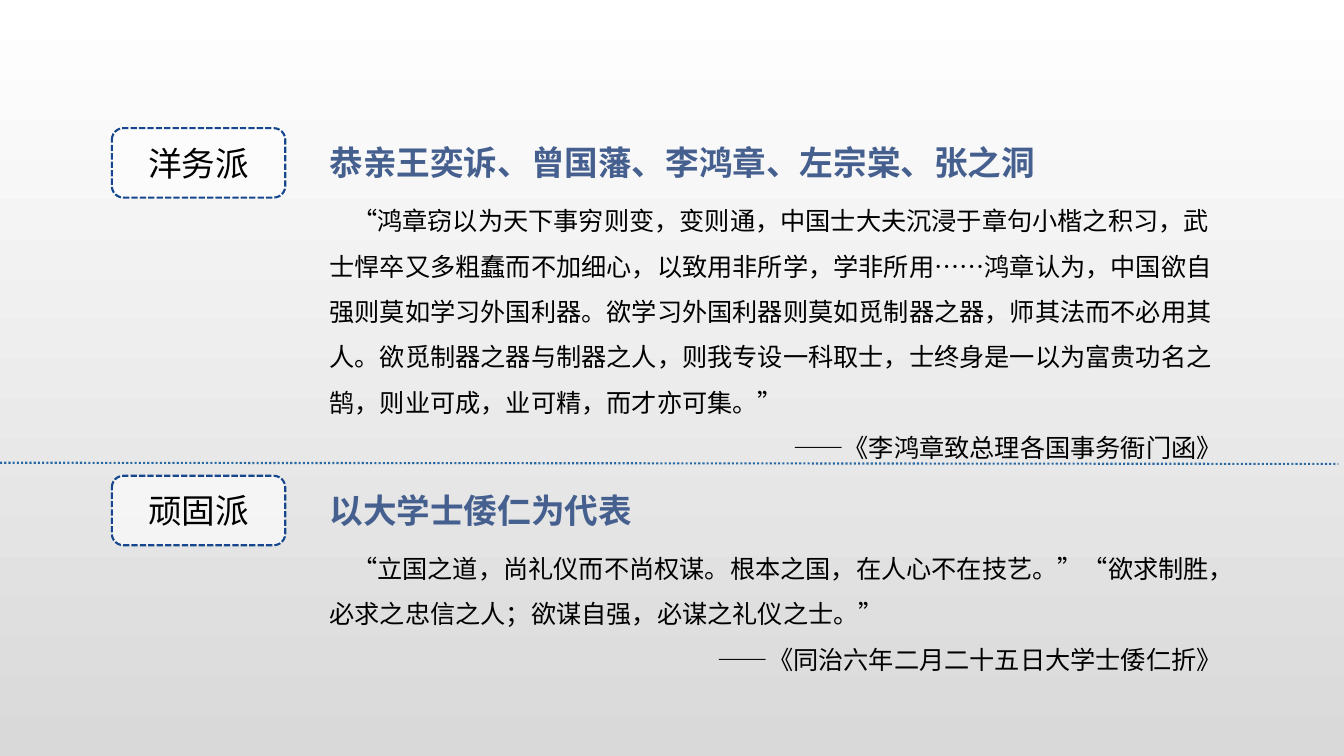
from dataclasses import dataclass
from lxml.etree import SubElement
from pptx import Presentation
from pptx.dml.color import RGBColor
from pptx.enum.dml import MSO_LINE
from pptx.enum.lang import MSO_LANGUAGE_ID
from pptx.enum.shapes import MSO_CONNECTOR, MSO_SHAPE
from pptx.enum.text import MSO_ANCHOR, MSO_AUTO_SIZE, PP_ALIGN
from pptx.oxml.ns import qn
from pptx.util import Cm, Pt


@dataclass(frozen=True)
class Theme:
    face: str = "Noto Sans CJK SC"
    ink: RGBColor = RGBColor(0x00, 0x00, 0x00)
    heading: RGBColor = RGBColor(0x45, 0x5F, 0x8E)
    outline: RGBColor = RGBColor(0x16, 0x46, 0x8D)
    divider: RGBColor = RGBColor(0x29, 0x69, 0xA3)
    white: RGBColor = RGBColor(0xFF, 0xFF, 0xFF)
    grey: RGBColor = RGBColor(0xD9, 0xD9, 0xD9)
    large: Pt = Pt(24)
    body: Pt = Pt(18)
    stroke: Pt = Pt(1.5)
    label_opacity: int = 62


THEME = Theme()

FACTIONS = [
    {
        "box": (2.82, 3.23, 28.22, 8.43),
        "label": "洋务派",
        "leaders": "恭亲王奕诉、曾国藩、李鸿章、左宗棠、张之洞",
        "quote": "“鸿章窃以为天下事穷则变，变则通，中国士大夫沉浸于章句小楷之积习，"
                 "武士悍卒又多粗蠢而不加细心，以致用非所学，学非所用……鸿章认为，"
                 "中国欲自强则莫如学习外国利器。欲学习外国利器则莫如觅制器之器，"
                 "师其法而不必用其人。欲觅制器之器与制器之人，则我专设一科取士，"
                 "士终身是一以为富贵功名之鹄，则业可成，业可精，而才亦可集。”",
        "origin": "——《李鸿章致总理各国事务衙门函》",
    },
    {
        "box": (2.82, 11.99, 28.22, 5.0),
        "label": "顽固派",
        "leaders": "以大学士倭仁为代表",
        "quote": "“立国之道，尚礼仪而不尚权谋。根本之国，在人心不在技艺。”"
                 "“欲求制胜，必求之忠信之人；欲谋自强，必谋之礼仪之士。”",
        "origin": "——《同治六年二月二十五日大学士倭仁折》",
    },
]


def apply(target, formats):
    for attribute, value in formats.items():
        setattr(target, attribute, value)


def place(part, left, top, width, height):
    apply(part, {"left": Cm(left), "top": Cm(top),
                 "width": Cm(width), "height": Cm(height)})


def write(paragraph, wording, size, color, bold=False, indent=0, **formats):
    properties = paragraph._p.get_or_add_pPr()
    properties.set("marL", "0")
    properties.set("indent", str(Cm(indent)))
    SubElement(properties, qn("a:buNone"))
    apply(paragraph, {"space_before": Pt(0), **formats})
    run = paragraph.add_run()
    run.text = wording
    apply(run.font, {"name": THEME.face, "size": size, "bold": bold,
                     "language_id": MSO_LANGUAGE_ID.SIMPLIFIED_CHINESE})
    run.font.color.rgb = color
    SubElement(run._r.get_or_add_rPr(), qn("a:ea"), typeface=THEME.face)


def add_label(slide, box, wording):
    label = slide.shapes.add_shape(MSO_SHAPE.ROUNDED_RECTANGLE,
                                   *(Cm(length) for length in box))
    label.shadow.inherit = False
    label.fill.solid()
    label.fill.fore_color.rgb = THEME.white
    white = label._element.spPr.find(qn("a:solidFill"))[0]
    SubElement(white, qn("a:alpha"), val=str(THEME.label_opacity * 1000))
    apply(label.line, {"width": THEME.stroke, "dash_style": MSO_LINE.SQUARE_DOT})
    label.line.color.rgb = THEME.outline
    label.text_frame.vertical_anchor = MSO_ANCHOR.MIDDLE
    write(label.text_frame.paragraphs[0], wording, THEME.large, THEME.ink,
          alignment=PP_ALIGN.CENTER)


def add_faction(slide, heading, passage, faction):
    left, top, width, height = faction["box"]
    text_left, text_width = left + 5.23, width - 5.23
    place(heading, text_left, top + 0.23, 19.7, 1.27)
    place(passage, text_left, top + 1.44, text_width, height - 1.44)
    for part in (heading, passage):
        apply(part.text_frame, {"word_wrap": True,
                                "auto_size": MSO_AUTO_SIZE.NONE,
                                "vertical_anchor": MSO_ANCHOR.TOP})
    write(heading.text_frame.paragraphs[0], faction["leaders"],
          THEME.large, THEME.heading, bold=True)
    write(passage.text_frame.paragraphs[0], faction["quote"],
          THEME.body, THEME.ink, indent=0.57, line_spacing=1.5)
    write(passage.text_frame.add_paragraph(), faction["origin"],
          THEME.body, THEME.ink, line_spacing=1.5, alignment=PP_ALIGN.RIGHT)
    add_label(slide, (left, top, 4.37, 1.75), faction["label"])


def add_divider(slide, left, top, width, height):
    divider = slide.shapes.add_connector(
        MSO_CONNECTOR.STRAIGHT, Cm(left), Cm(top), Cm(left + width), Cm(top + height))
    apply(divider.line, {"width": THEME.stroke, "dash_style": MSO_LINE.ROUND_DOT})
    divider.line.color.rgb = THEME.divider
    SubElement(divider._element.spPr, qn("a:effectLst"))


def paint_background(slide):
    fill = slide.background.fill
    fill.gradient()
    fill.gradient_angle = 270
    for stop, position, color in zip(fill.gradient_stops, (0, 1),
                                     (THEME.white, THEME.grey)):
        stop.position = position
        stop.color.rgb = color


def main():
    deck = Presentation()
    apply(deck, {"slide_width": Cm(33.87), "slide_height": Cm(19.05)})
    slide = deck.slides.add_slide(deck.slide_layouts.get_by_name("Comparison"))
    paint_background(slide)
    title, *parts = slide.placeholders
    title._element.getparent().remove(title._element)
    for heading, passage, faction in zip(parts[::2], parts[1::2], FACTIONS):
        add_faction(slide, heading, passage, faction)
    add_divider(slide, 0, 11.66, 33.73, 0.03)
    deck.save("out.pptx")


if __name__ == "__main__":
    main()
